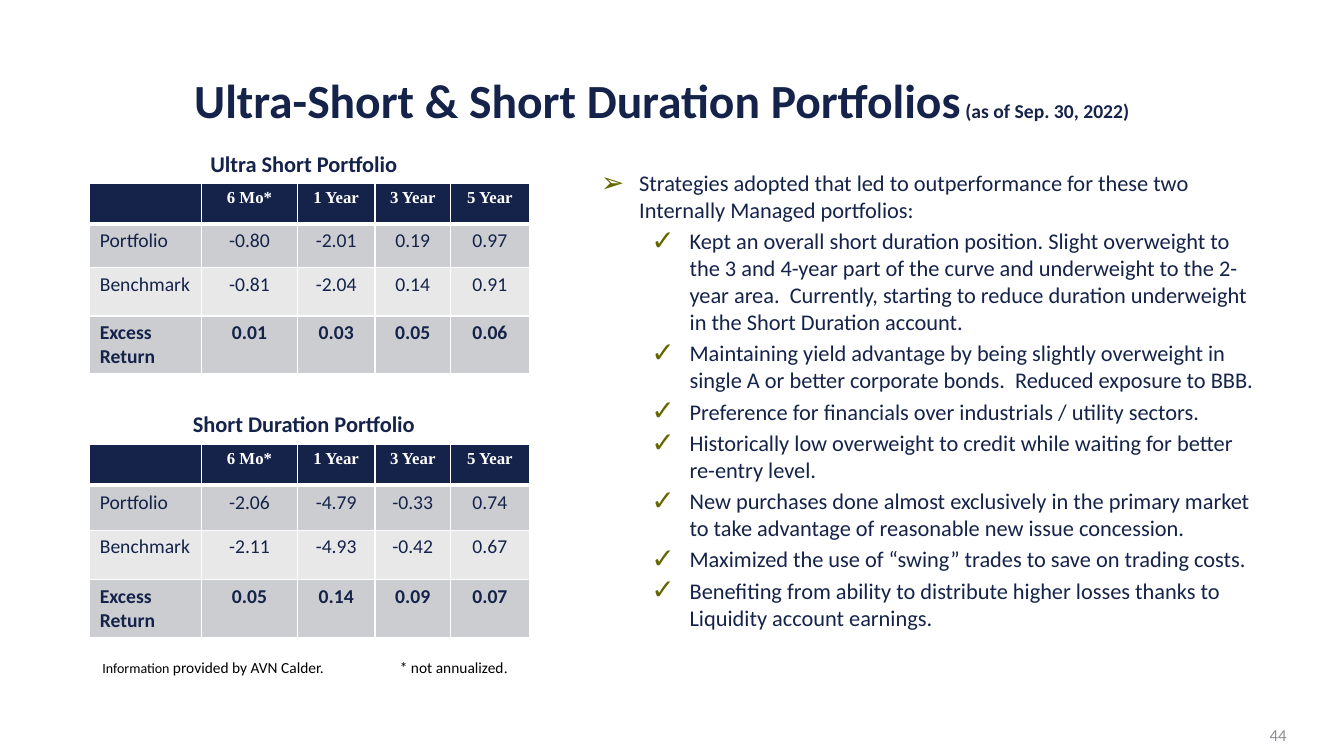
from dataclasses import dataclass

from lxml.etree import SubElement
from pptx import Presentation
from pptx.dml.color import RGBColor
from pptx.enum.text import MSO_ANCHOR, MSO_AUTO_SIZE, PP_ALIGN
from pptx.oxml.ns import qn
from pptx.util import Emu, Inches, Pt


@dataclass(frozen=True)
class Theme:
    sans: str = "Calibri"
    serif: str = "Times New Roman"
    navy: str = "15234A"
    olive: str = "666600"
    white: str = "FFFFFF"
    black: str = "000000"
    grey: str = "8C8D96"
    bands: tuple = ("CCCDD0", "E8E8E9")
    title: float = 34
    body: float = 16
    cell: float = 14
    small: float = 12
    note: float = 11
    fine: float = 10


@dataclass(frozen=True)
class Box:
    """A rectangle in EMU, cut into smaller ones by percentages of its own size."""
    left: float
    top: float
    width: float
    height: float

    def cut(self, left, top, width, height):
        return Box(self.left + self.width * left / 100, self.top + self.height * top / 100,
                   self.width * width / 100, self.height * height / 100)

    def emu(self):
        return [Emu(round(v)) for v in (self.left, self.top, self.width, self.height)]


T = Theme()
COLUMNS = (25.46, 21.79, 17.66, 17.2, 17.89)  # percent of the table width
ROWS = (17.7, 19.3, 21.3, 25)  # percent of the panel height
HEADING = 100 - sum(ROWS)
PERIODS = ("", "6 Mo*", "1 Year", "3 Year", "5 Year")
PANELS = (
    ("Ultra Short Portfolio", (3.6, 19.2, 38.03, 30), (
        ("Portfolio", "-0.80", "-2.01", "0.19", "0.97"),
        ("Benchmark", "-0.81", "-2.04", "0.14", "0.91"),
        ("Excess Return", "0.01", "0.03", "0.05", "0.06"))),
    ("Short Duration Portfolio", (3.6, 53.6, 38.03, 30.8), (
        ("Portfolio", "-2.06", "-4.79", "-0.33", "0.74"),
        ("Benchmark", "-2.11", "-4.93", "-0.42", "0.67"),
        ("Excess Return", "0.05", "0.14", "0.09", "0.07"))),
)
LEAD = "Strategies adopted that led to outperformance for these two Internally Managed portfolios:"
STRATEGIES = (
    "Kept an overall short duration position. Slight overweight to the 3 and 4-year part of the "
    "curve and underweight to the 2-year area.  Currently, starting to reduce duration "
    "underweight in the Short Duration account.",
    "Maintaining yield advantage by being slightly overweight in single A or better corporate "
    "bonds.  Reduced exposure to BBB.",
    "Preference for financials over industrials / utility sectors.",
    "Historically low overweight to credit while waiting for better re-entry level.",
    "New purchases done almost exclusively in the primary market to take advantage of "
    "reasonable new issue concession.",
    "Maximized the use of “swing” trades to save on trading costs.",
    "Benefiting from ability to distribute higher losses thanks to Liquidity account earnings.",
)


def add_run(p, text, size, color=T.navy, name=T.sans, bold=False):
    r = p.add_run()
    r.text = text
    for key, value in {"size": Pt(size), "name": name, "bold": bold}.items():
        setattr(r.font, key, value)
    r.font.color.rgb = RGBColor.from_string(color)


def place(sp, box):
    for key, value in zip(("left", "top", "width", "height"), box.emu()):
        setattr(sp, key, value)


def set_frame(tf, anchor):
    for key, value in {"word_wrap": True, "auto_size": MSO_AUTO_SIZE.NONE,
                       "vertical_anchor": anchor}.items():
        setattr(tf, key, value)


def add_text(s, box, *runs, align=PP_ALIGN.CENTER, anchor=MSO_ANCHOR.TOP):
    tf = s.shapes.add_textbox(*box.emu()).text_frame
    set_frame(tf, anchor)
    p = tf.paragraphs[0]
    p.alignment = align
    for text, style in runs:
        add_run(p, text, **style)


def add_title(s, box):
    sp = s.shapes.title
    place(sp, box)
    set_frame(sp.text_frame, MSO_ANCHOR.MIDDLE)
    p = sp.text_frame.paragraphs[0]
    p.alignment = PP_ALIGN.CENTER
    p.line_spacing = 0.9
    add_run(p, "Ultra-Short & Short Duration Portfolios", T.title, bold=True)
    add_run(p, " (as of Sep. 30, 2022)", T.cell, bold=True)


def set_borders(cell, top, bottom):
    tc_pr = cell._tc.get_or_add_tcPr()
    for side, width in {"L": 1, "R": 1, "T": top, "B": bottom}.items():
        ln = SubElement(tc_pr, qn(f"a:ln{side}"), w=str(Pt(width)))
        SubElement(SubElement(ln, qn("a:solidFill")), qn("a:srgbClr"), val=T.white)


def add_panel(s, box, heading, returns):
    """Place a centred heading with its table of returns below."""
    add_text(s, box.cut(0, 0, 100, HEADING), (heading, {"size": T.body, "bold": True}))
    area = box.cut(8.09, HEADING, 86, 100 - HEADING)
    table = s.shapes.add_table(len(ROWS), len(COLUMNS), *area.emu()).table
    for column, share in zip(table.columns, COLUMNS):
        column.width = Emu(round(area.width * share / 100))
    for row, share in zip(table.rows, ROWS):
        row.height = Emu(round(box.height * share / 100))
    for i, values in enumerate((PERIODS, *returns)):
        head = i == 0
        fill = T.navy if head else T.bands[(i - 1) % 2]
        style = ({"size": T.small, "color": T.white, "name": T.serif, "bold": True} if head
                 else {"size": T.cell, "bold": i == len(returns)})
        for j, value in enumerate(values):
            cell = table.cell(i, j)
            set_borders(cell, top=3 if i == 1 else 1, bottom=3 if head else 1)
            cell.fill.solid()
            cell.fill.fore_color.rgb = RGBColor.from_string(fill)
            p = cell.text_frame.paragraphs[0]
            p.alignment = PP_ALIGN.CENTER if j else PP_ALIGN.LEFT
            if value:
                add_run(p, value, **style)


def set_bullet(p, char, margin):
    p_pr = p._p.get_or_add_pPr()
    p_pr.set("marL", str(Inches(margin)))
    p_pr.set("indent", str(Inches(-0.38)))
    SubElement(SubElement(p_pr, qn("a:buClr")), qn("a:srgbClr"), val=T.olive)
    SubElement(p_pr, qn("a:buSzPct"), val="125000")
    SubElement(p_pr, qn("a:buChar"), char=char)


def add_strategies(s, box):
    sp = s.placeholders[1]
    place(sp, box)
    tf = sp.text_frame
    set_frame(tf, MSO_ANCHOR.TOP)
    for i, text in enumerate((LEAD, *STRATEGIES)):
        p = tf.add_paragraph() if i else tf.paragraphs[0]
        p.level = 1 if i else 0
        set_bullet(p, *(("✓", 0.88) if i else ("➢", 0.38)))
        p.space_before = Pt(0.2 * T.body if i else 0)
        add_run(p, text, T.body)


def add_footer(s, box):
    """Place the two table notes and the page number."""
    note = {"size": T.note, "color": T.black}
    add_text(s, box.cut(3.38, 0, 24.98, 28.4),
             ("Information", {**note, "size": T.fine}), (" provided by AVN Calder.", note))
    add_text(s, box.cut(20.33, 0, 26.86, 28.4),
             ("* not annualized", note), (".", {**note, "name": T.serif}))
    add_text(s, box.cut(73.97, 59.8, 22.5, 39.2), ("44", {"size": T.small, "color": T.grey}),
             align=PP_ALIGN.RIGHT, anchor=MSO_ANCHOR.MIDDLE)


def main():
    prs = Presentation()
    prs.slide_width, prs.slide_height = Inches(13.33), Inches(7.5)
    s = prs.slides.add_slide(prs.slide_layouts[1])
    page = Box(0, 0, prs.slide_width, prs.slide_height)
    add_title(s, page.cut(5.1, 10.27, 88.3, 6.67))
    for heading, area, returns in PANELS:
        add_panel(s, page.cut(*area), heading, returns)
    add_strategies(s, page.cut(43.96, 21.73, 50.26, 68.13))
    add_footer(s, page.cut(0, 86.4, 100, 13.6))
    prs.save("out.pptx")


if __name__ == "__main__":
    main()
